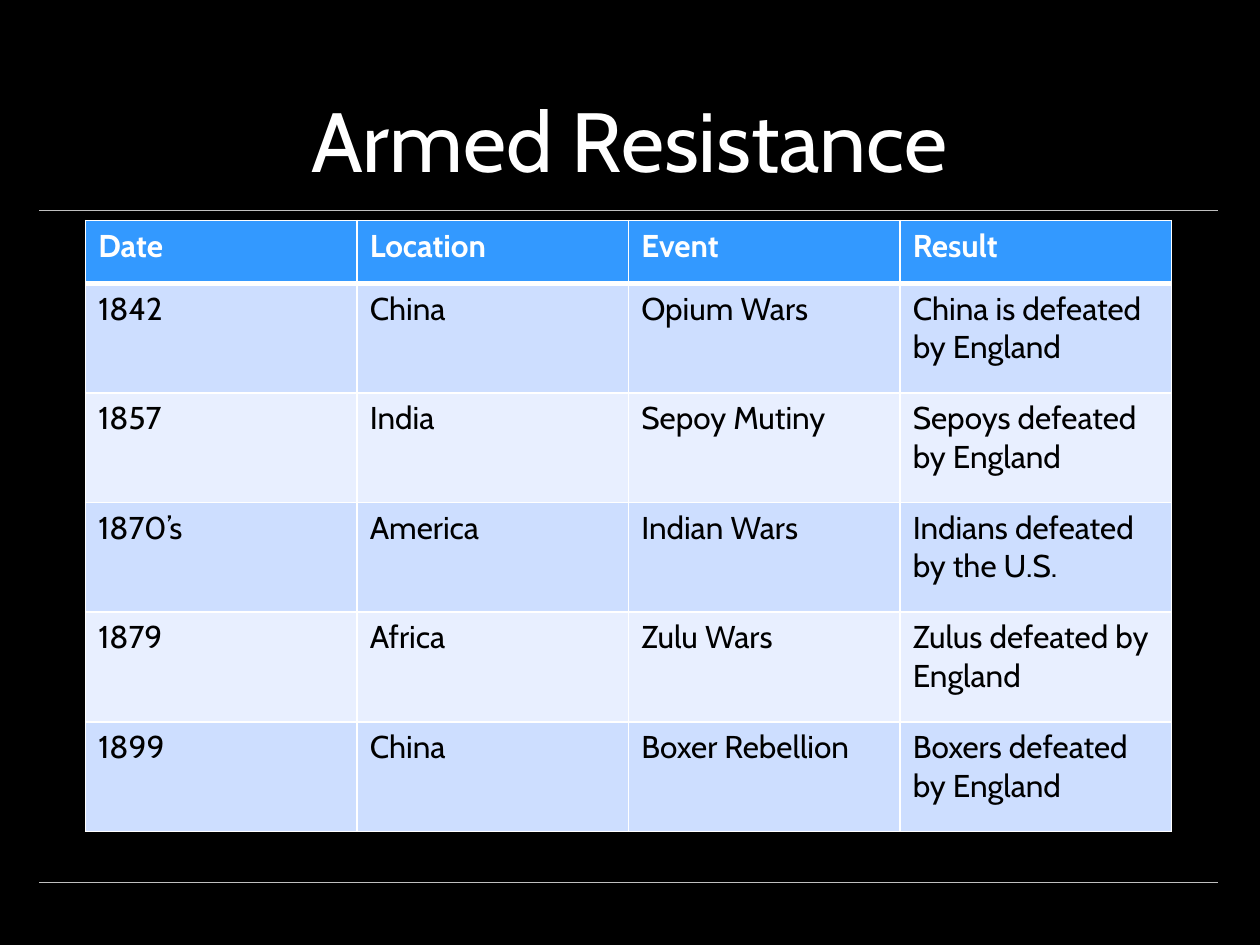
from lxml.etree import SubElement
from pptx import Presentation
from pptx.dml.color import RGBColor
from pptx.enum.shapes import MSO_CONNECTOR
from pptx.enum.text import MSO_ANCHOR, MSO_AUTO_SIZE, PP_ALIGN
from pptx.oxml.ns import qn
from pptx.util import Inches, Pt

ROWS = [
    ("Date", "Location", "Event", "Result"),
    ("1842", "China", "Opium Wars", "China is defeated by England"),
    ("1857", "India", "Sepoy Mutiny", "Sepoys defeated by England"),
    ("1870’s", "America", "Indian Wars", "Indians defeated by the U.S."),
    ("1879", "Africa", "Zulu Wars", "Zulus defeated by England"),
    ("1899", "China", "Boxer Rebellion", "Boxers defeated by England"),
]


def color(value):
    return RGBColor.from_string(value)


class SlideBuilder:
    font = "Cabin"
    white = "FFFFFF"
    black = "000000"
    rule_color = "BFBFBF"
    header_fill = "3399FF"
    band_fills = ("E8EFFF", "CDDEFF")

    def __init__(self, presentation):
        self.slide = presentation.slides.add_slide(presentation.slide_layouts[5])
        background = self.slide.background.fill
        background.solid()
        background.fore_color.rgb = color(self.black)

    def format_text(self, text_frame, size, text_color, bold=False):
        for paragraph in text_frame.paragraphs:
            for run in paragraph.runs:
                run.font.name = self.font
                run.font.size = Pt(size)
                run.font.bold = bold
                run.font.color.rgb = color(text_color)

    def rule(self, left, top, width):
        line = self.slide.shapes.add_connector(
            MSO_CONNECTOR.STRAIGHT,
            Inches(left), Inches(top), Inches(left + width), Inches(top),
        )
        line.line.color.rgb = color(self.rule_color)
        line.line.width = Pt(0.25)
        SubElement(line._element.spPr, qn("a:effectLst"))

    def title(self, text, left, top, width, height):
        title = self.slide.shapes.title
        title.left, title.top = Inches(left), Inches(top)
        title.width, title.height = Inches(width), Inches(height)
        text_frame = title.text_frame
        text_frame.text = text
        text_frame.word_wrap = True
        text_frame.auto_size = MSO_AUTO_SIZE.NONE
        text_frame.vertical_anchor = MSO_ANCHOR.BOTTOM
        text_frame.paragraphs[0].alignment = PP_ALIGN.CENTER
        self.format_text(text_frame, 48, self.white)

    def cell_border(self, cell, side, width):
        properties = cell._tc.get_or_add_tcPr()
        border = SubElement(properties, qn(f"a:ln{side}"), w=str(Pt(width)))
        fill = SubElement(border, qn("a:solidFill"))
        SubElement(fill, qn("a:srgbClr"), val=self.white)

    def format_cell(self, cell, row):
        is_header = row == 0
        widths = {"L": 1, "R": 1, "T": 3 if row == 1 else 1, "B": 3 if is_header else 1}
        for side, width in widths.items():
            self.cell_border(cell, side, width)
        cell.fill.solid()
        cell.fill.fore_color.rgb = color(self.header_fill if is_header else self.band_fills[row % 2])
        text_color = self.white if is_header else self.black
        self.format_text(cell.text_frame, 18, text_color, is_header)

    def table(self, rows, left, top, column_width, header_height, row_height):
        column_count = len(rows[0])
        height = header_height + row_height * (len(rows) - 1)
        table = self.slide.shapes.add_table(
            len(rows), column_count, Inches(left), Inches(top),
            Inches(column_width * column_count), Inches(height),
        ).table
        for column in table.columns:
            column.width = Inches(column_width)
        for row, values in enumerate(rows):
            table.rows[row].height = Inches(row_height if row else header_height)
            for column, value in enumerate(values):
                cell = table.cell(row, column)
                cell.text_frame.text = value
                self.format_cell(cell, row)


def main():
    presentation = Presentation()
    presentation.slide_width = Inches(10)
    presentation.slide_height = Inches(7.5)
    builder = SlideBuilder(presentation)
    for top in (1.67, 7):
        builder.rule(0.31, top, 9.36)
    builder.title("Armed Resistance", 0.7, 0.12, 8.59, 1.43)
    builder.table(ROWS, 0.68, 1.75, column_width=2.155, header_height=0.5, row_height=0.87)
    presentation.save("out.pptx")


if __name__ == "__main__":
    main()
